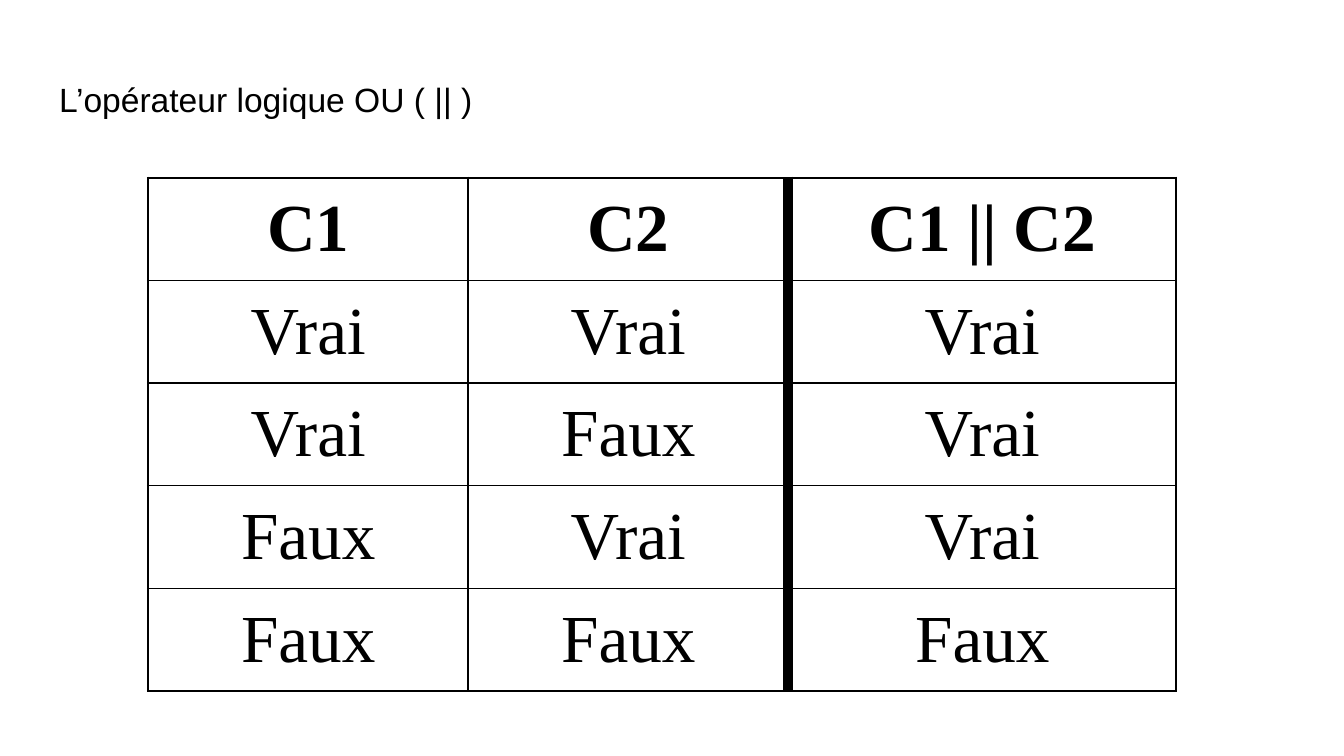
from lxml import etree
from pptx import Presentation
from pptx import util as u
from pptx.dml.color import RGBColor
from pptx.enum import text
from pptx.oxml import ns

# Content
TITLE = "L’opérateur logique OU ( || )"
HEADERS = ("C1", "C2", "C1 || C2")
TRUTH_ROWS = [
    ("Vrai", "Vrai", "Vrai"),
    ("Vrai", "Faux", "Vrai"),
    ("Faux", "Vrai", "Vrai"),
    ("Faux", "Faux", "Faux"),
]

THEME = {
    "ink": "000000",
    "title_font": "Arial",
    "title_size": u.Pt(18),
    "table_font": "Times New Roman",
    "table_size": u.Pt(36),
}

# Rule weights: outer frame, inner grid, divider before the result column
FRAME, GRID, DIVIDER = u.Pt(1.5), u.Pt(1), u.Pt(6)
COLUMN_RULES = (FRAME, GRID, DIVIDER, FRAME)
ROW_RULES = (FRAME,) + (GRID,) * len(TRUTH_ROWS) + (FRAME,)

# Layout
COLUMN_WIDTHS = (u.Cm(6.05), u.Cm(6.05), u.Cm(7.33))
ROW_HEIGHT = u.Cm(1.94)
TABLE_LEFT, TABLE_TOP = u.Cm(2.8), u.Cm(3.36)


def style_font(paragraph, name, size, bold=False):
    font = paragraph.font
    font.name, font.size, font.bold = name, size, bold
    font.color.rgb = RGBColor.from_string(THEME["ink"])


def set_border(cell, side, width):
    properties = cell._tc.get_or_add_tcPr()
    line = etree.SubElement(properties, ns.qn(f"a:ln{side}"), w=str(width))
    fill = etree.SubElement(line, ns.qn("a:solidFill"))
    etree.SubElement(fill, ns.qn("a:srgbClr"), val=THEME["ink"])


def add_title(slide):
    box = slide.shapes.add_textbox(u.Cm(0.87), u.Cm(1.24), u.Cm(23.67), u.Cm(1.6))
    frame = box.text_frame
    frame.word_wrap = True
    frame.margin_left = frame.margin_right = u.Cm(0.25)
    frame.margin_top = frame.margin_bottom = u.Cm(0.25)
    frame.text = TITLE
    style_font(frame.paragraphs[0], THEME["title_font"], THEME["title_size"])


def add_truth_table(slide):
    rows = [HEADERS] + TRUTH_ROWS
    table = slide.shapes.add_table(
        len(rows), len(HEADERS), TABLE_LEFT, TABLE_TOP,
        sum(COLUMN_WIDTHS), ROW_HEIGHT * len(rows)).table
    table.horz_banding = False
    for column, width in zip(table.columns, COLUMN_WIDTHS):
        column.width = width
    for r, values in enumerate(rows):
        table.rows[r].height = ROW_HEIGHT
        for c, value in enumerate(values):
            cell = table.cell(r, c)
            cell.text = value
            cell.vertical_anchor = text.MSO_ANCHOR.MIDDLE
            cell.margin_left = cell.margin_right = u.Cm(0.18)
            cell.margin_top = cell.margin_bottom = 0
            paragraph = cell.text_frame.paragraphs[0]
            paragraph.alignment = text.PP_ALIGN.CENTER
            style_font(paragraph, THEME["table_font"], THEME["table_size"], bold=r == 0)
            # Borders come before the fill in the cell properties
            set_border(cell, "L", COLUMN_RULES[c])
            set_border(cell, "R", COLUMN_RULES[c + 1])
            set_border(cell, "T", ROW_RULES[r])
            set_border(cell, "B", ROW_RULES[r + 1])
            cell.fill.background()


def main():
    presentation = Presentation()
    presentation.slide_width, presentation.slide_height = u.Cm(25.4), u.Cm(14.29)
    slide = presentation.slides.add_slide(presentation.slide_layouts[6])
    add_title(slide)
    add_truth_table(slide)
    presentation.save("out.pptx")


if __name__ == "__main__":
    main()
